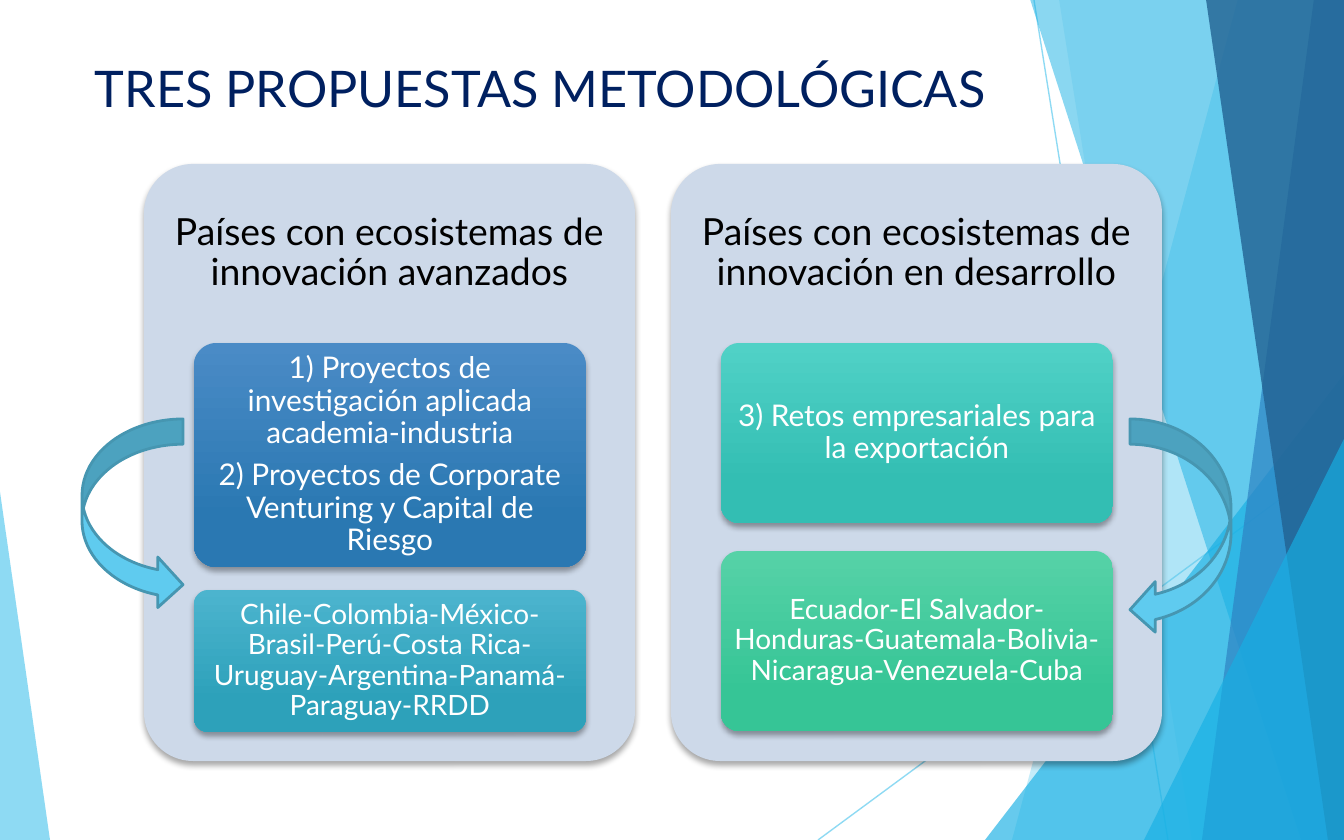
from lxml import etree
from pptx import Presentation
from pptx import util as u
from pptx.dml.color import RGBColor
from pptx.enum import shapes, text
from pptx.oxml.ns import qn

SCALE = u.Inches(1) / 134.4
WIDTH, HEIGHT = 1344, 840
FONT = "Lato"
SKY, CYAN, BLUE, NAVY = "5FCBEF", "17B0E4", "2E83C3", "226292"

PANEL_TOP, PANEL_WIDTH, PANEL_HEIGHT = 164, 491, 597
PANEL_LEFT, PANEL_STEP = 144, 527
CARD_INDENT, CARD_WIDTH = 50, 392

# Each card: top, height, text size, gradient colours, paragraphs
PANELS = [
    ("Países con ecosistemas de innovación avanzados", [
        (343, 224, 16, ("4A8BC6", "2A78B2"),
         ["1) Proyectos de investigación aplicada academia-industria",
          "2) Proyectos de Corporate Venturing y Capital de Riesgo"]),
        (590, 142, 15, ("4CB4CE", "2DA1BA"),
         ["Chile-Colombia-México-Brasil-Perú-Costa Rica-"
          "Uruguay-Argentina-Panamá-Paraguay-RRDD"]),
    ]),
    ("Países con ecosistemas de innovación en desarrollo", [
        (343, 180, 16, ("50D1C6", "33BEB3"),
         ["3) Retos empresariales para la exportación"]),
        (551, 180, 15, ("56D2A7", "36C596"),
         ["Ecuador-El Salvador-Honduras-Guatemala-Bolivia-"
          "Nicaragua-Venezuela-Cuba"]),
    ]),
]


def px(length):
    return u.Emu(round(length * SCALE))


def color(value):
    return RGBColor.from_string(value)


def set_alpha(fill_owner, percent):
    for node in fill_owner.iter(qn("a:srgbClr")):
        etree.SubElement(node, qn("a:alpha"), val=str(percent * 1000))


def add_shadow(shape):
    effects = shape._element.spPr.find(qn("a:effectLst"))
    outer = etree.SubElement(
        effects, qn("a:outerShdw"), blurRad=str(u.Pt(3)), dist=str(u.Pt(2)),
        dir="5400000", algn="ctr", rotWithShape="0")
    shade = etree.SubElement(outer, qn("a:srgbClr"), val="000000")
    etree.SubElement(shade, qn("a:alpha"), val="35000")


def paint(shape, fill, alpha=None):
    shape.shadow.inherit = False
    shape.fill.solid()
    shape.fill.fore_color.rgb = color(fill)
    shape.line.fill.background()
    if alpha:
        set_alpha(shape._element.spPr, alpha)


def add_preset(page, kind, left, top, width, height, fill, alpha=None, adjust=None):
    shape = page.shapes.add_shape(kind, px(left), px(top), px(width), px(height))
    if adjust is not None:
        shape.adjustments[0] = adjust
    paint(shape, fill, alpha)
    return shape


def add_facet(page, top_x, bottom_x, fill, alpha):
    """Translucent band from a slanted left edge to the slide's right edge."""
    builder = page.shapes.build_freeform(px(top_x), px(-1))
    corners = [(WIDTH, -1), (WIDTH, HEIGHT), (bottom_x, HEIGHT)]
    builder.add_line_segments([(px(x), px(y)) for x, y in corners], close=True)
    paint(builder.convert_to_shape(), fill, alpha)


def add_triangle(page, left, top, width, apex, fill, alpha):
    add_preset(page, shapes.MSO_SHAPE.ISOSCELES_TRIANGLE, left, top, width,
               HEIGHT - top, fill, alpha, apex)


def add_hairline(page, start, end):
    line = page.shapes.add_connector(
        shapes.MSO_CONNECTOR.STRAIGHT, *map(px, start + end))
    line.line.color.rgb = color(SKY)
    line.line.width = u.Pt(0.75)
    properties = line._element.spPr
    set_alpha(properties, 70)
    etree.SubElement(properties, qn("a:effectLst"))


def write(shape, paragraphs, size, ink, align=text.PP_ALIGN.CENTER,
          anchor=text.MSO_ANCHOR.MIDDLE, insets=(5, 4, 5, 4), leading=0.9):
    frame = shape.text_frame
    frame.word_wrap = True
    frame.vertical_anchor = anchor
    (frame.margin_left, frame.margin_top,
     frame.margin_right, frame.margin_bottom) = map(px, insets)
    for index, wording in enumerate(paragraphs):
        para = frame.add_paragraph() if index else frame.paragraphs[0]
        para.alignment = align
        para.line_spacing = leading
        para.space_after = u.Pt(size * 0.35)
        span = para.add_run()
        span.text = wording
        span.font.name = FONT
        span.font.size = u.Pt(size)
        span.font.color.rgb = color(ink)


def add_title(page, wording):
    box = page.shapes.add_textbox(px(82), px(50), px(948), px(161))
    write(box, [wording], 27, "002060", align=text.PP_ALIGN.LEFT,
          anchor=text.MSO_ANCHOR.TOP, insets=(13, 7, 13, 7), leading=1.0)


def add_card(page, left, top, height, size, gradient, paragraphs):
    card = add_preset(page, shapes.MSO_SHAPE.ROUNDED_RECTANGLE, left, top,
                      CARD_WIDTH, height, gradient[0], adjust=0.1)
    card.fill.gradient()
    card.fill.gradient_angle = 270
    for stop, position, tint in zip(card.fill.gradient_stops, (0, 0.78), gradient):
        stop.position = position
        stop.color.rgb = color(tint)
    add_shadow(card)
    write(card, paragraphs, size, "FFFFFF")


def add_panel(page, left, heading, cards):
    panel = add_preset(page, shapes.MSO_SHAPE.ROUNDED_RECTANGLE, left, PANEL_TOP,
                       PANEL_WIDTH, PANEL_HEIGHT, "CDD9E9", adjust=0.1)
    add_shadow(panel)
    # The deep bottom inset keeps the heading above the cards
    write(panel, [heading], 20, "000000", insets=(0, 0, 0, 418))
    for card in cards:
        add_card(page, left + CARD_INDENT, *card)


def add_curved_arrow(page, kind, left, height):
    arrow = add_preset(page, kind, left, 419, 101, height, SKY)
    arrow.line.color.rgb = color("4696B1")
    arrow.line.width = u.Pt(1.5)


def add_backdrop(page):
    add_hairline(page, (1034, 0), (1168, HEIGHT))
    add_hairline(page, (WIDTH, 452), (818, HEIGHT))
    add_facet(page, 1238, 1012, SKY, 36)
    add_facet(page, 1059, 1192, SKY, 20)
    add_triangle(page, 985, 374, 359, 1, CYAN, 66)
    add_facet(page, 1030, 1301, CYAN, 50)
    add_facet(page, 1314, 1202, BLUE, 70)
    add_facet(page, 1206, 1328, NAVY, 80)
    add_triangle(page, 1144, 439, 200, 1, CYAN, 66)
    add_triangle(page, 0, 492, 50, 0, SKY, 70)


def main():
    deck = Presentation()
    deck.slide_width, deck.slide_height = px(WIDTH), px(HEIGHT)
    page = deck.slides.add_slide(deck.slide_layouts[6])

    # Background facets and title
    add_backdrop(page)
    add_title(page, "TRES PROPUESTAS METODOLÓGICAS")

    # Country groups with their proposals
    for index, (heading, cards) in enumerate(PANELS):
        add_panel(page, PANEL_LEFT + index * PANEL_STEP, heading, cards)

    # Arrows from proposals to countries
    add_curved_arrow(page, shapes.MSO_SHAPE.CURVED_RIGHT_ARROW, 82, 191)
    add_curved_arrow(page, shapes.MSO_SHAPE.CURVED_LEFT_ARROW, 1130, 216)

    deck.save("out.pptx")


if __name__ == "__main__":
    main()
